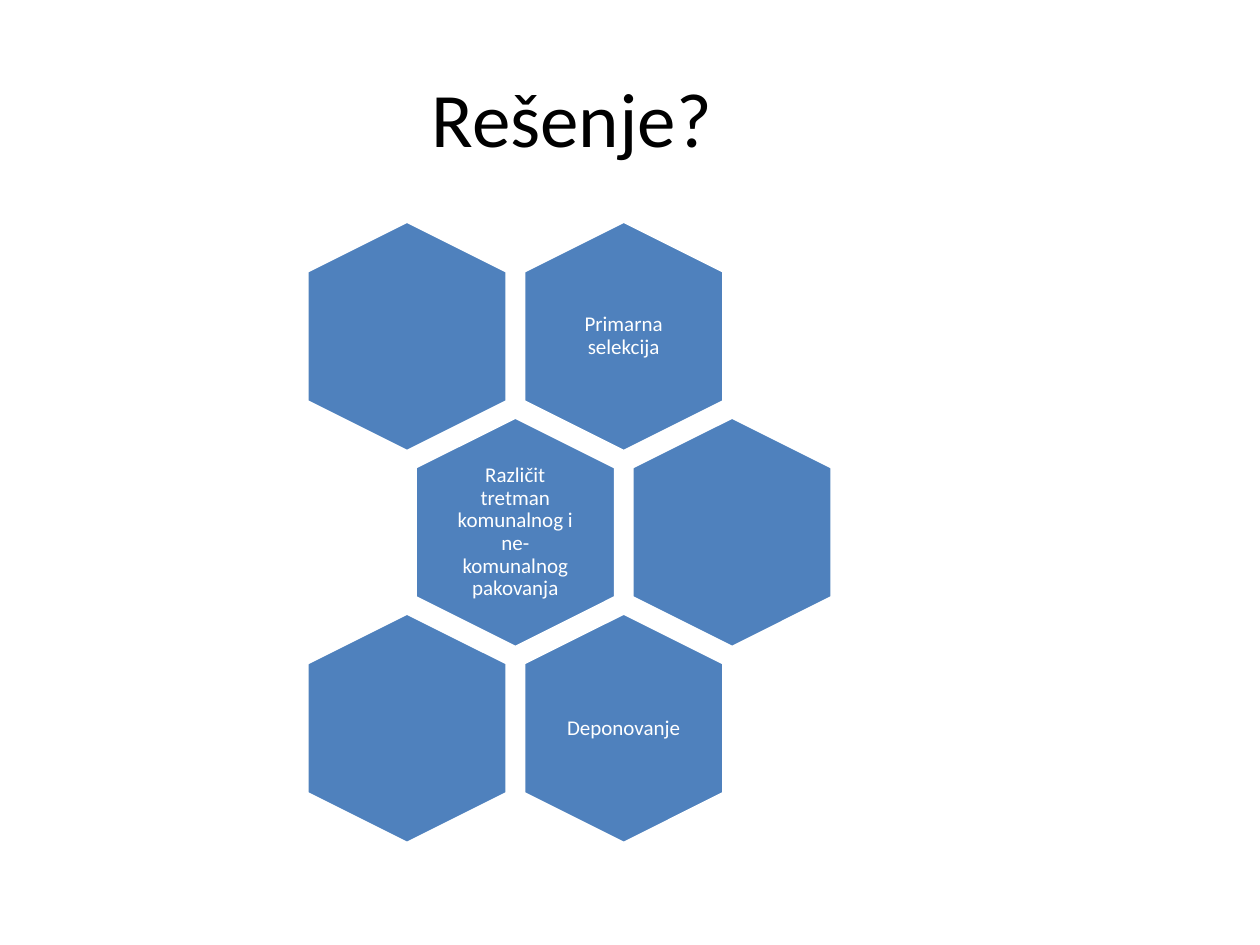
import pptx
import pptx.util
import pptx.dml.color
import pptx.enum.shapes
import pptx.enum.text

Inch = pptx.util.Inches
Pt = pptx.util.Pt


def color(code):
    return pptx.dml.color.RGBColor.from_string(code)


def write(shape, text, size=12, ink="FFFFFF", inset=0.05, lines=None):
    frame = shape.text_frame
    frame.word_wrap = True
    frame.vertical_anchor = pptx.enum.text.MSO_ANCHOR.MIDDLE
    frame.margin_left = frame.margin_right = Inch(inset)
    frame.margin_top = frame.margin_bottom = Inch(0.05)
    para = frame.paragraphs[0]
    para.text = text
    para.alignment = pptx.enum.text.PP_ALIGN.CENTER
    para.line_spacing = lines
    para.font.size = Pt(size)
    para.font.name = "Calibri"
    para.font.color.rgb = color(ink)


deck = pptx.Presentation()
deck.slide_width, deck.slide_height = Inch(10), Inch(7.5)
slide = deck.slides.add_slide(deck.slide_layouts[5])

title = slide.shapes.title
title.left, title.top = Inch(0.5), Inch(0.3)
title.width, title.height = Inch(8.08), Inch(1.25)
write(title, "Rešenje?", size=44, ink="000000", inset=0.1)

# Honeycomb: the middle row is shifted right by half a column
left, top = 3.23, 2.67
col, row = 1.72, 1.555
long, short = 1.83, 1.59
wide, high = 1.1, 1.26
cells = [
    ["", "Primarna selekcija"],
    ["Različit tretman komunalnog i ne-komunalnog pakovanja", ""],
    ["", "Deponovanje"],
]

for r, labels in enumerate(cells):
    for c, label in enumerate(labels):
        x = left + (c + r % 2 / 2) * col
        y = top + r * row
        cell = slide.shapes.add_shape(
            pptx.enum.shapes.MSO_SHAPE.HEXAGON,
            Inch(x - long / 2), Inch(y - short / 2), Inch(long), Inch(short))
        cell.rotation = 90
        cell.adjustments[0] = 0.25
        cell.shadow.inherit = False
        cell.fill.solid()
        cell.fill.fore_color.rgb = color("4F81BD")
        cell.line.color.rgb = color("FFFFFF")
        cell.line.width = Pt(2)
        if label:
            box = slide.shapes.add_textbox(
                Inch(x - wide / 2), Inch(y - high / 2), Inch(wide), Inch(high))
            write(box, label, lines=0.9)

deck.save("out.pptx")
